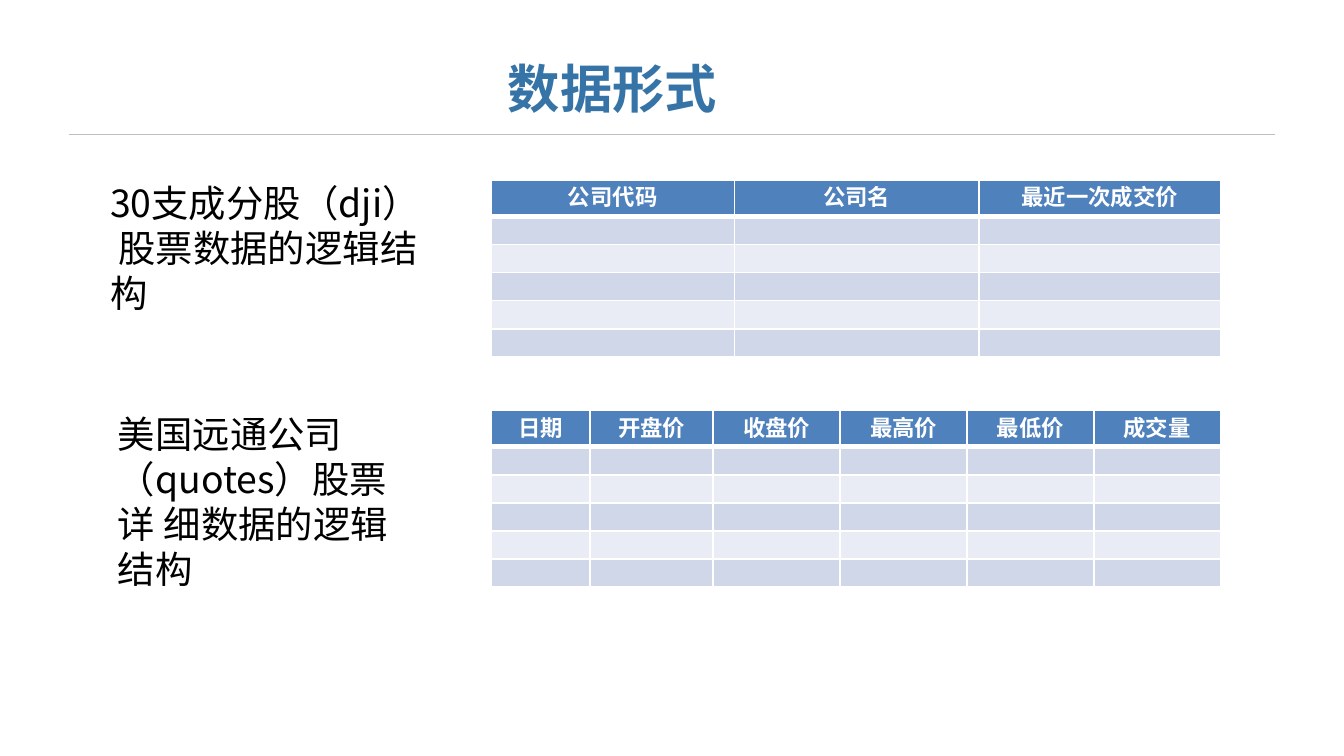
from pptx import Presentation
from pptx.dml.color import RGBColor
from pptx.enum.shapes import MSO_CONNECTOR
from pptx.enum.text import MSO_ANCHOR, MSO_AUTO_SIZE, PP_ALIGN
from pptx.oxml.ns import qn
from pptx.util import Cm, Pt
from lxml.etree import SubElement

FONT = "Noto Sans CJK SC"
BLUE = RGBColor(0x36, 0x74, 0xA8)
HEAD = RGBColor(0x4F, 0x81, 0xBC)
DARK = RGBColor(0xD0, 0xD7, 0xE8)
PALE = RGBColor(0xE9, 0xEC, 0xF4)
GRAY = RGBColor(0xBE, 0xBE, 0xBE)
BLACK = RGBColor(0, 0, 0)
WHITE = RGBColor(255, 255, 255)

TITLE = "数据形式"
NOTES = [
    ((2.08, 3.41, 6.35, 3.9), [["30支成分股（dji）", " 股票数据的逻辑结构"]]),
    ((2.23, 7.77, 5.72, 5.5), [["美国远通公司"], ["（quotes）股票详 细数据的逻辑结构"]]),
]
TABLES = [
    (3.4, [4.6, 4.62, 4.57], ["公司代码", "公司名", "最近一次成交价"]),
    (7.75, [1.87, 2.33, 2.4, 2.4, 2.39, 2.4],
     ["日期", "开盘价", "收盘价", "最高价", "最低价", "成交量"]),
]
LEFT, HEAD_H, ROW_H, ROWS = 9.28, 0.69, 0.53, 5


def add_run(para, text, size, color, bold=False):
    run = para.add_run()
    run.text = text
    font = run.font
    font.name, font.size, font.bold = FONT, Pt(size), bold
    font.color.rgb = color
    SubElement(font._element, qn("a:ea"), typeface=FONT)


def clear_pad(box):
    box.margin_left = box.margin_right = box.margin_top = box.margin_bottom = 0


def place(shape, left, top, width, height):
    shape.left, shape.top = Cm(left), Cm(top)
    shape.width, shape.height = Cm(width), Cm(height)


def set_edges(cell, top, bottom):
    props = cell._tc.get_or_add_tcPr()
    for tag, width in (("lnL", 1), ("lnR", 1), ("lnT", top), ("lnB", bottom)):
        line = SubElement(props, qn("a:" + tag), w=str(Pt(width)))
        fill = SubElement(line, qn("a:solidFill"))
        SubElement(fill, qn("a:srgbClr"), val=str(WHITE))


def add_grid(slide, top, widths, heads):
    shape = slide.shapes.add_table(
        ROWS + 1, len(heads), Cm(LEFT), Cm(top),
        Cm(sum(widths)), Cm(HEAD_H + ROWS * ROW_H))
    table = shape.table
    for col, width in zip(table.columns, widths):
        col.width = Cm(width)
    for r, row in enumerate(table.rows):
        row.height = Cm(ROW_H if r else HEAD_H)
        for c, cell in enumerate(row.cells):
            clear_pad(cell)
            set_edges(cell, 3 if r == 1 else 1, 1 if r else 3)
            cell.fill.solid()
            para = cell.text_frame.paragraphs[0]
            if r:
                cell.fill.fore_color.rgb = DARK if r % 2 else PALE
                SubElement(para._p, qn("a:endParaRPr"), sz="800")
            else:
                cell.fill.fore_color.rgb = HEAD
                para.alignment = PP_ALIGN.CENTER
                add_run(para, heads[c], 12, WHITE, True)


def add_note(slide, spot, paras):
    frame = slide.shapes.add_textbox(*map(Cm, spot)).text_frame
    frame.word_wrap = True
    clear_pad(frame)
    for i, lines in enumerate(paras):
        para = frame.add_paragraph() if i else frame.paragraphs[0]
        for j, text in enumerate(lines):
            if j:
                para.add_line_break()
            add_run(para, text, 20, BLACK)


def main():
    deck = Presentation()
    deck.slide_width, deck.slide_height = Cm(25.4), Cm(14.28)
    slide = deck.slides.add_slide(deck.slide_layouts[5])

    title = slide.shapes.title
    place(title, 9.6, 1.07, 11.5, 1.42)
    frame = title.text_frame
    frame.auto_size = MSO_AUTO_SIZE.NONE
    frame.vertical_anchor = MSO_ANCHOR.TOP
    clear_pad(frame)
    para = frame.paragraphs[0]
    para.alignment = PP_ALIGN.LEFT
    add_run(para, TITLE, 28, BLUE, True)

    rule = slide.shapes.add_connector(
        MSO_CONNECTOR.STRAIGHT, Cm(1.3), Cm(2.54), Cm(24.1), Cm(2.54))
    rule.line.color.rgb = GRAY
    rule.line.width = Pt(1)
    SubElement(rule._element.spPr, qn("a:effectLst"))

    for spot, paras in NOTES:
        add_note(slide, spot, paras)
    for top, widths, heads in TABLES:
        add_grid(slide, top, widths, heads)
    deck.save("out.pptx")


if __name__ == "__main__":
    main()
